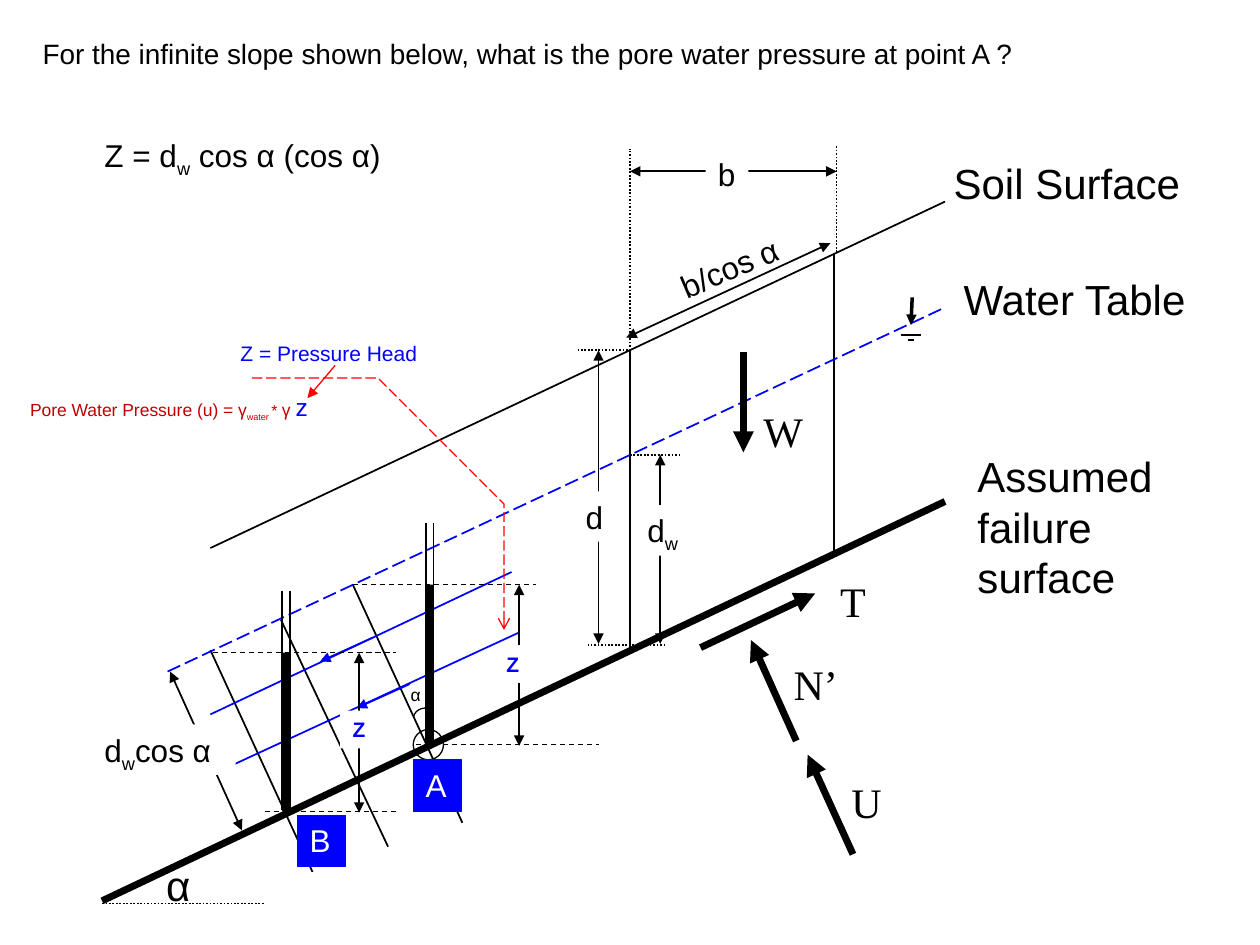
from pptx import Presentation
from pptx import util as u
from pptx.dml.color import RGBColor
from pptx.enum import dml, shapes
from pptx.oxml import parse_xml
from pptx.oxml.ns import nsdecls, qn

"""Draw the infinite slope diagram with two piezometers and its forces."""

THEME = {
    "sans": "Arial", "serif": "Times New Roman",
    "black": "000000", "white": "FFFFFF", "blue": "0000FF", "red": "FF0000", "dark red": "C00000",
    "heading": 24, "title": 16, "label": 18, "note": 12, "small": 10, "sub": 9, "z": 14,
    "hair": 0.75, "thin": 1, "medium": 2, "thick": 4,
}
DASHES = {"dot": dml.MSO_LINE.ROUND_DOT, "dash": dml.MSO_LINE.DASH, "long": dml.MSO_LINE.LONG_DASH}

# Groups of lines: shared style, then (x1, y1, x2, y2) for each line
LINE_GROUPS = [
    ({}, [
        (1.67, 4.35, 7.5, 1.6),
        (5, 2.77, 5, 5.17), (6.62, 2.02, 6.62, 4.42),
        (2.48, 6.92, 1.67, 5.16), (3.08, 6.72, 2.23, 4.92), (3.67, 6.53, 2.8, 4.64),
        (7.15, 2.66, 7.31, 2.66), (7.21, 2.7, 7.25, 2.7)]),
    ({"color": "blue", "dash": "long"}, [(1.33, 5.33, 7.5, 2.44)]),
    ({"color": "blue"}, [(1.67, 5.67, 4.06, 4.54), (1.85, 6.07, 4.12, 5.02)]),
    ({"color": "blue", "ends": ("head",)}, [(2.54, 5.25, 2.96, 5.06), (2.83, 5.62, 3.25, 5.43)]),
    ({"width": "thick"}, [(0.81, 7.15, 7.5, 3.98)]),
    ({"dash": "dot"}, [
        (5.01, 2.78, 4.59, 2.78), (5.28, 5.12, 4.67, 5.12), (5, 3.61, 5.4, 3.61),
        (5, 2.78, 5, 1.18), (6.64, 2, 6.64, 1.16), (0.81, 7.17, 2.1, 7.17)]),
    ({"ends": ("head", "tail")}, [
        (4.75, 2.78, 4.75, 5.11), (5.24, 3.61, 5.24, 5.11), (5, 1.36, 6.64, 1.36),
        (4.97, 2.68, 6.59, 1.93), (1.92, 6.59, 1.35, 5.33)]),
    ({"width": "thick", "ends": ("tail",)}, [
        (5.9, 2.79, 5.9, 3.59), (5.56, 5.14, 6.47, 4.71),
        (6.32, 5.88, 5.96, 5.08), (6.77, 6.78, 6.41, 5.99)]),
    ({"width": "medium", "ends": ("tail",)}, [(7.24, 2.36, 7.23, 2.58)]),
    ({"color": "red", "width": "hair", "ends": ("tail",)}, [(2.66, 2.9, 2.44, 3.16)]),
]

PIEZOMETERS = [
    {"bar": (3.38, 4.64), "level": (2.8, 4.25), "foot": (3.3, 4.75, 5.91), "height": 4.12,
     "z": (3.92, 5.12, 0.4), "badge": ("A", 3.28, 6.03)},
    {"bar": (2.24, 5.18), "level": (1.69, 3.14), "foot": (2.1, 3.14, 6.44), "height": 2.85,
     "z": (2.7, 5.64, 0.28), "badge": ("B", 2.36, 6.47)},
]

# Wording (text or list of spans), then left, top, width, height, then style
SUB = {"baseline": -25000}
LABELS = [
    ("d", (4.55, 3.9, 0.4, 0.4), {"fill": "white"}),
    ([("d", {}), ("w", SUB)], (5.04, 4.01, 0.57, 0.4), {"fill": "white"}),
    ("b", (5.6, 1.18, 0.34, 0.4), {"fill": "white"}),
    ([("d", {}), ("w", SUB), ("cos α", {})], (0.73, 5.75, 1.14, 0.4), {"fill": "white"}),
    ("W", (5.96, 3.17, 0.49, 0.5), {"size": "heading", "font": "serif"}),
    ("T", (6.57, 4.52, 0.73, 0.5), {"size": "heading", "font": "serif"}),
    ("N’", (6.2, 5.18, 0.73, 0.5), {"size": "heading", "font": "serif"}),
    ("U", (6.66, 6.11, 0.73, 0.5), {"size": "heading", "font": "serif"}),
    ("b/cos α", (5.28, 1.91, 1.08, 0.4), {"turn": 337}),
    ("α", (1.22, 6.77, 0.72, 0.5), {"size": "heading"}),
    ("α", (3.16, 5.38, 0.72, 0.27), {"size": "small"}),
    ("Soil Surface", (7.47, 1.2, 2.08, 0.5), {"size": "heading"}),
    ("Water Table", (7.55, 2.12, 2.4, 0.5), {"size": "heading"}),
    ("Assumed failure surface", (7.66, 3.53, 2.2, 1.3), {"size": "heading"}),
    ("For the infinite slope shown below, what is the pore water pressure at point A ?",
     (0.24, 0.24, 9.03, 0.37), {"size": "title"}),
    ([("Z = d", {}), ("w", SUB), (" cos α (cos α)", {})], (0.73, 1.03, 2.41, 0.4), {"wrap": False}),
    ([("Pore Water Pressure (u) = γ", {}), ("water ", {"size": "sub", **SUB}), ("* ", {"size": "sub"}),
      ("γ ", {}), ("z", {"size": "z", "color": "blue"})],
     (0.14, 3.06, 2.56, 0.34), {"size": "small", "color": "dark red"}),
    ("Z = Pressure Head", (1.81, 2.65, 1.62, 0.3), {"size": "note", "color": "blue", "wrap": False}),
]

SLOPE_ANGLE = [(1.5, 6.82), (1.66, 6.82), (1.78, 6.98), (1.78, 7.17)]
Z_POINTER = [(2.49, 3.2), (3.78, 3.07), (4.66, 4.77), (4.13, 5.24)]


def color_of(name):
    return RGBColor.from_string(THEME[name])


def style_line(item, color="black", width="thin", dash=None, ends=(), arrow="triangle"):
    item.line.color.rgb = color_of(color)
    item.line.width = u.Pt(THEME[width])
    if dash:
        item.line.dash_style = DASHES[dash]
    outline = item.line._get_or_add_ln()
    for end in ends:
        outline.append(parse_xml(f'<a:{end}End {nsdecls("a")} type="{arrow}"/>'))


def add_line(page, points, **style):
    line = page.shapes.add_connector(shapes.MSO_CONNECTOR.STRAIGHT, *map(u.Inches, points))
    style_line(line, **style)
    properties = line._element.find(qn("p:spPr"))
    properties.append(parse_xml(f'<a:effectLst {nsdecls("a")}/>'))


def add_outline(page, kind, place, fill=None, line=True):
    shape = page.shapes.add_shape(kind, *map(u.Inches, place))
    shape.shadow.inherit = False
    if fill:
        shape.fill.solid()
        shape.fill.fore_color.rgb = color_of(fill)
    else:
        shape.fill.background()
    if line:
        style_line(shape, width="hair")
    else:
        shape.line.fill.background()
    return shape


def add_curve(page, controls, steps=32, **style):
    points = []
    for step in range(steps + 1):
        t = step / steps
        weights = ((1 - t) ** 3, 3 * t * (1 - t) ** 2, 3 * t * t * (1 - t), t ** 3)
        points.append(tuple(sum(w * c[axis] for w, c in zip(weights, controls)) for axis in (0, 1)))
    builder = page.shapes.build_freeform(*points[0], scale=u.Inches(1))
    builder.add_line_segments(points[1:], close=False)
    curve = builder.convert_to_shape()
    curve.shadow.inherit = False
    curve.fill.background()
    style_line(curve, **style)


def add_label(page, wording, place, fill=None, border=None, size="label", font="sans",
              color="black", bold=False, turn=0, wrap=True):
    box = page.shapes.add_textbox(*map(u.Inches, place))
    box.rotation = turn
    box.text_frame.word_wrap = wrap
    if fill:
        box.fill.solid()
        box.fill.fore_color.rgb = color_of(fill)
    if border:
        style_line(box, color=border, width="hair")
    para = box.text_frame.paragraphs[0]
    for words, change in [(wording, {})] if isinstance(wording, str) else wording:
        span = para.add_run()
        span.text = words
        span.font.name = THEME[font]
        span.font.size = u.Pt(THEME[change.get("size", size)])
        span.font.bold = bold
        span.font.color.rgb = color_of(change.get("color", color))
        if "baseline" in change:
            span._r.get_or_add_rPr().set("baseline", str(change["baseline"]))


def add_piezometer(page, bar, level, foot, height, z, badge):
    left, top = bar
    start, stop, base = foot
    for x in (left, left + 0.06):
        add_line(page, (x, top + 1.25, x, top - 0.49))
    add_line(page, (level[0], top, level[1], top), width="hair", dash="dash")
    add_line(page, (start, base, stop, base), width="hair", dash="dash")
    add_line(page, (height, top, height, base + 0.01), ends=("head", "tail"))
    add_outline(page, shapes.MSO_SHAPE.RECTANGLE, (left, top, 0.06, 1.26), fill="black", line=False)
    add_label(page, "Z", (*z, 0.3), fill="white", size="note", color="blue", bold=True)
    letter, x, y = badge
    add_label(page, letter, (x, y, 0.38, 0.41), fill="blue", border="blue", color="white", wrap=False)


def main():
    deck = Presentation()
    deck.slide_width, deck.slide_height = u.Inches(10), u.Inches(7.5)
    page = deck.slides.add_slide(deck.slide_layouts[6])
    for style, lines in LINE_GROUPS:
        for points in lines:
            add_line(page, points, **style)
    add_outline(page, shapes.MSO_SHAPE.OVAL, (3.28, 5.79, 0.24, 0.24))
    add_outline(page, shapes.MSO_SHAPE.ARC, (3.29, 5.61, 0.18, 0.2)).rotation = 281.6
    for piezometer in PIEZOMETERS:
        add_piezometer(page, **piezometer)
    for wording, place, style in LABELS:
        add_label(page, wording, place, **style)
    add_curve(page, SLOPE_ANGLE)
    add_curve(page, Z_POINTER, color="red", width="hair", dash="long", ends=("tail",), arrow="arrow")
    deck.save("out.pptx")


if __name__ == "__main__":
    main()
